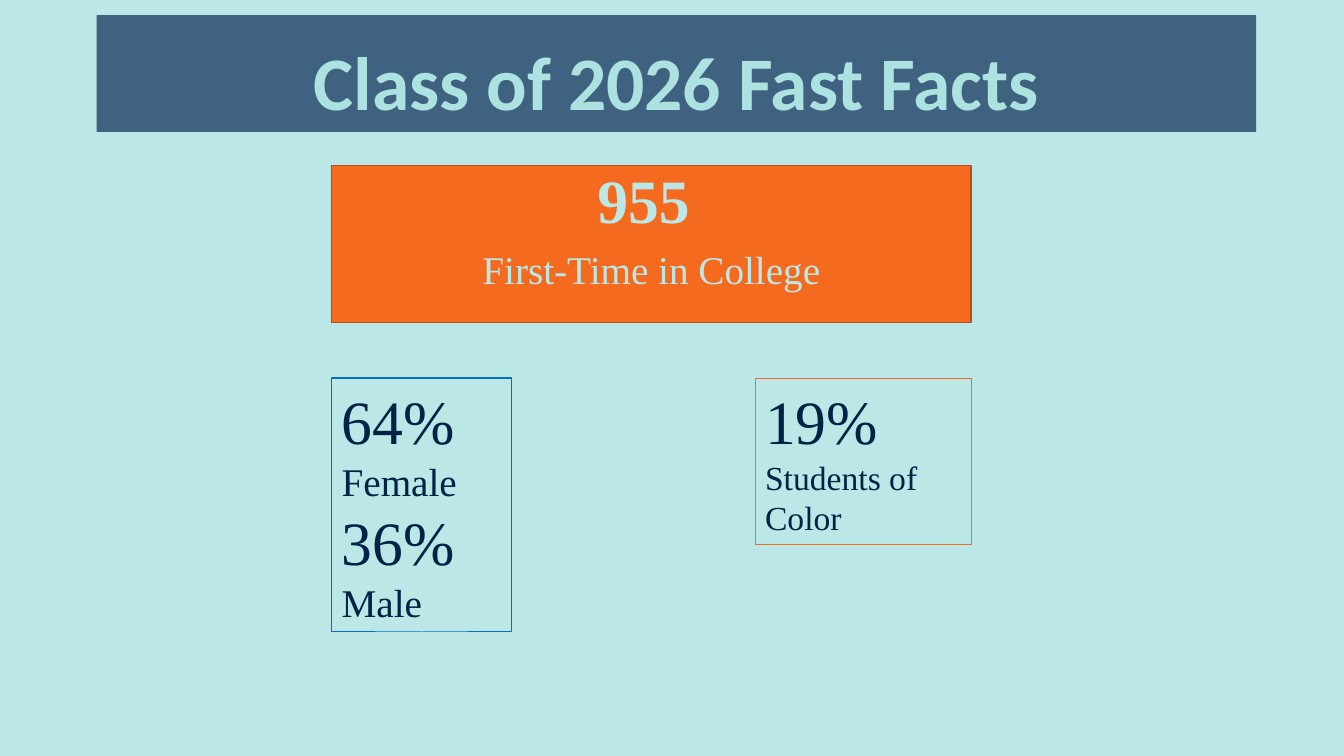
from pptx import Presentation
from pptx.dml.color import RGBColor
from pptx.enum.shapes import MSO_SHAPE
from pptx.enum.text import MSO_ANCHOR, PP_ALIGN
from pptx.util import Inches, Pt

AQUA = RGBColor(0xBB, 0xE7, 0xE6)
TITLE_AQUA = RGBColor(0xAC, 0xE2, 0xE0)
SLATE = RGBColor(0x3F, 0x62, 0x80)
ORANGE = RGBColor(0xF4, 0x6A, 0x1F)
RUST = RGBColor(0xB5, 0x4E, 0x17)
BLUE = RGBColor(0x00, 0x70, 0xC0)
NAVY = RGBColor(0x00, 0x22, 0x44)

SERIF = "Times New Roman"
LEFT, RIGHT = 3.29, 9.63  # shared edges of the fact boxes
FACTS_TOP = 3.75


def add_panel(slide, box, fill=None, line=None, line_width=0,
              anchor=MSO_ANCHOR.TOP):
    """Add a rectangle at box (left, top, width, height) and return its text frame."""
    sp = slide.shapes.add_shape(MSO_SHAPE.RECTANGLE, *map(Inches, box))
    sp.shadow.inherit = False
    if fill is None:
        sp.fill.background()
    else:
        sp.fill.solid()
        sp.fill.fore_color.rgb = fill
    if line is None:
        sp.line.fill.background()
    else:
        sp.line.color.rgb = line
        sp.line.width = Pt(line_width)
    tf = sp.text_frame
    tf.word_wrap = True
    tf.vertical_anchor = anchor
    return tf


def write(tf, paragraphs, color, font=SERIF, **paragraph_format):
    """Write paragraphs, each a list of (text, size, bold) runs."""
    for i, runs in enumerate(paragraphs):
        p = tf.add_paragraph() if i else tf.paragraphs[0]
        for name, value in paragraph_format.items():
            if i or name != "space_before":
                setattr(p, name, value)
        for text, size, bold in runs:
            r = p.add_run()
            r.text = text
            r.font.color.rgb = color
            for name, value in dict(name=font, size=Pt(size), bold=bold).items():
                setattr(r.font, name, value)


def add_title(slide, box, text):
    tf = add_panel(slide, box, fill=SLATE, anchor=MSO_ANCHOR.BOTTOM)
    write(tf, [[(text, 54, True)]], TITLE_AQUA, "Calibri",
          alignment=PP_ALIGN.CENTER, line_spacing=0.9)


def add_headline(slide, box, number, label):
    tf = add_panel(slide, box, fill=ORANGE, line=RUST, line_width=1)
    write(tf, [[(number, 44, True)], [(label, 28, False)]], AQUA,
          alignment=PP_ALIGN.CENTER, line_spacing=0.9, space_before=Pt(10))


def add_facts(slide, box, paragraphs, line, line_width):
    tf = add_panel(slide, box, line=line, line_width=line_width)
    write(tf, paragraphs, NAVY, alignment=PP_ALIGN.LEFT)


def main():
    prs = Presentation()
    prs.slide_width, prs.slide_height = Inches(13.33), Inches(7.5)
    slide = prs.slides.add_slide(prs.slide_layouts[6])
    slide.background.fill.solid()
    slide.background.fill.fore_color.rgb = AQUA

    add_title(slide, (0.96, 0.15, 11.5, 1.16), "Class of 2026 Fast Facts")
    add_headline(slide, (LEFT, 1.64, RIGHT - LEFT, 1.56),
                 "955 ", "First-Time in College")

    color_width, gender_width = 2.14, 1.78
    add_facts(slide, (RIGHT - color_width, FACTS_TOP, color_width, 1.65),
              [[("19%", 44, False)], [("Students of Color", 24, False)]],
              ORANGE, 0.5)
    genders = [("64% ", "Female"), ("36% ", "Male")]
    add_facts(slide, (LEFT, FACTS_TOP, gender_width, 2.52),
              [[(share, 44, False), (label, 28, False)] for share, label in genders],
              BLUE, 0.75)

    prs.save("out.pptx")


if __name__ == "__main__":
    main()
